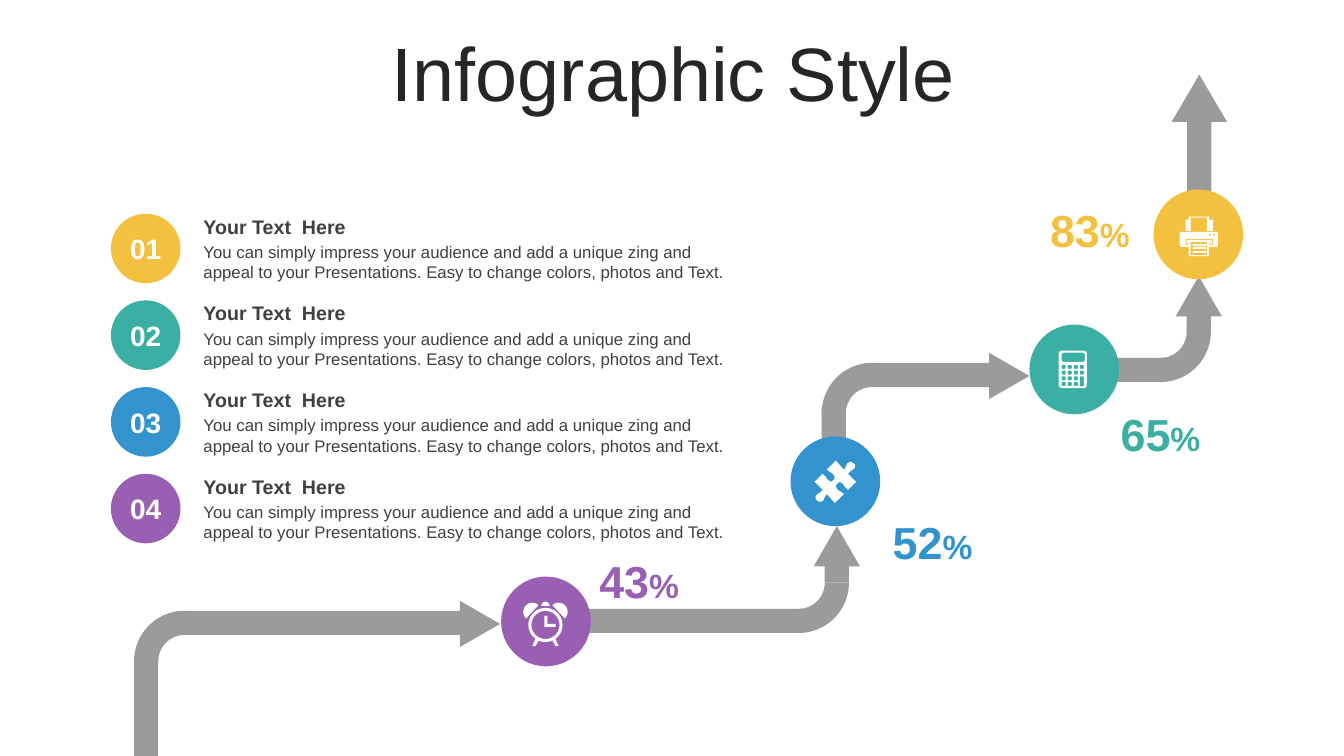
from math import cos, radians, sin

from pptx import Presentation
from pptx.dml.color import RGBColor
from pptx.enum.shapes import MSO_SHAPE as Kind
from pptx.enum.text import MSO_ANCHOR as Anchor, PP_ALIGN as Align
from pptx.util import Inches, Pt

GRAY, DARK, TEXT, WHITE = "9B9B9B", "262626", "404040", "FFFFFF"
GOLD, TEAL, BLUE, PLUM = "F3C040", "3CAFA4", "3293CF", "995FB2"
HEAD = "Your Text  Here"
BODY = ("You can simply impress your audience and add a unique zing and "
        "appeal to your Presentations. Easy to change colors, photos and Text.")


def paint(fill, tone):
    """Give a fill one solid colour."""
    fill.solid()
    fill.fore_color.rgb = RGBColor.from_string(tone)


def style(run, size, tone, bold=False):
    """Set the font of one run."""
    run.font.name, run.font.size, run.font.bold = "Arial", Pt(size), bold
    run.font.color.rgb = RGBColor.from_string(tone)


def plain(shape, tone):
    """Leave a shape with only a fill."""
    shape.shadow.inherit = False
    paint(shape.fill, tone)
    shape.line.fill.background()
    return shape


def draw(slide, kind, x, y, w, h, tone=GRAY, turn=0):
    """Add a preset shape."""
    shape = slide.shapes.add_shape(kind, Inches(x), Inches(y), Inches(w), Inches(h))
    shape.rotation = turn
    return plain(shape, tone)


def write(slide, x, y, w, h, text, size, tone, bold=False):
    """Add a text box and return its paragraph."""
    box = slide.shapes.add_textbox(Inches(x), Inches(y), Inches(w), Inches(h))
    box.text_frame.word_wrap = True
    para = box.text_frame.paragraphs[0]
    para.text = text
    style(para.runs[0], size, tone, bold)
    return para


def bend(slide, x, y, turn):
    """Add a quarter of a round bend."""
    arc = draw(slide, Kind.BLOCK_ARC, x, y, 1, 1, turn=turn)
    for i, value in enumerate((108, 162.85, 0.24)):
        arc.adjustments[i] = value


def go_right(slide, x, y, w, h):
    """Draw a leg that climbs, then points right."""
    draw(slide, Kind.RECTANGLE, x, y + 0.45, 0.24, h - 0.45)
    bend(slide, x, y, 0)
    draw(slide, Kind.RECTANGLE, x + 0.48, y, w - 0.78, 0.24)
    draw(slide, Kind.ISOSCELES_TRIANGLE, x + w - 0.43, y - 0.07, 0.46, 0.4, turn=90)


def go_up(slide, x, y, w, h):
    """Draw a leg that runs right, then points up."""
    right, base = x + w, y + h
    draw(slide, Kind.RECTANGLE, x, base - 0.24, w - 0.46, 0.24)
    bend(slide, right - 1, base - 1, 180)
    draw(slide, Kind.RECTANGLE, right - 0.24, y + 0.28, 0.24, 0.28)
    draw(slide, Kind.ISOSCELES_TRIANGLE, right - 0.35, y, 0.46, 0.4)


def go_out(slide, x, y, w, h):
    """Draw the last arrow, straight up."""
    draw(slide, Kind.RECTANGLE, x + w / 2 - 0.12, y + 0.45, 0.24, h - 0.45)
    draw(slide, Kind.ISOSCELES_TRIANGLE, x, y, w, 0.47)


def rect(x, y, w, h):
    """List the corners of a rectangle."""
    return [(x, y), (x + w, y), (x + w, y + h), (x, y + h)]


def arc(x, y, r, start=0, end=360, steps=24):
    """List points along an arc."""
    turns = [radians(start + (end - start) * i / steps) for i in range(steps + 1)]
    return [(x + r * cos(t), y + r * sin(t)) for t in turns]


def soft(x, y, w, h, r):
    """List points of a rounded rectangle."""
    mids = [(x + w - r, y + h - r), (x + r, y + h - r), (x + r, y + r), (x + w - r, y + r)]
    return [p for i, (a, b) in enumerate(mids)
            for p in arc(a, b, r, 90 * i, 90 * i + 90, 4)]


def flip(loop):
    """Mirror a loop from left to right."""
    return [(-x, y) for x, y in loop]


def clock():
    """List the loops of an alarm clock."""
    ear = arc(-0.13, -0.1, 0.09, -47, -227)
    foot = [(0.1, 0.17), (0.13, 0.24), (0.1, 0.24), (0.07, 0.19)]
    hands = [(-0.01, -0.06), (0.02, -0.06), (0.02, 0.02),
             (0.1, 0.02), (0.1, 0.05), (-0.01, 0.05)]
    return [arc(0, 0.03, 0.17), arc(0, 0.03, 0.14), hands, ear, flip(ear),
            foot, flip(foot), arc(0, -0.16, 0.04, 180, 360)]


def puzzle():
    """List the loop of a puzzle piece, whose halves match."""
    half = [(0.29, 0.09), (0.31, 0.06), (0.32, 0.03), (0.35, 0.01), (0.38, 0.02),
            (0.4, 0.04), (0.4, 0.07), (0.38, 0.09), (0.36, 0.1), (0.33, 0.13),
            (0.41, 0.21), (0.33, 0.29), (0.3, 0.26), (0.28, 0.23), (0.25, 0.21),
            (0.22, 0.23), (0.21, 0.26), (0.23, 0.29), (0.26, 0.31), (0.29, 0.33),
            (0.2, 0.42)]
    return [half + [(0.41 - x, 0.42 - y) for x, y in half]]


def sums():
    """List the loops of a calculator."""
    keys = [soft(0.03 + 0.06 * col, 0.14 + 0.17 * row / 3, 0.04,
                 0.1 if (col, row) == (3, 2) else 0.04, 0.01)
            for row in range(4) for col in range(4) if (col, row) != (3, 3)]
    return [soft(0, 0, 0.28, 0.37, 0.03), soft(0.03, 0.02, 0.23, 0.09, 0.02)] + keys


def printer():
    """List the loops of a printer."""
    slot = [(0.06, 0.22), (0.06, 0.28), (0.09, 0.28), (0.09, 0.27), (0.07, 0.27),
            (0.07, 0.23), (0.32, 0.23), (0.32, 0.27), (0.29, 0.27), (0.29, 0.28),
            (0.33, 0.28), (0.33, 0.22)]
    feed = [(0.09, 0), (0.29, 0), (0.29, 0.03), (0.33, 0.03), (0.33, 0.14),
            (0.27, 0.14), (0.27, 0.01), (0.11, 0.01), (0.11, 0.14), (0.06, 0.14),
            (0.06, 0.03), (0.09, 0.03)]
    lines = [rect(0.13, y, 0.13, 0.02) for y in (0.27, 0.3, 0.34)]
    dots = [arc(x, 0.18, 0.01) for x in (0.3, 0.34)]
    return [soft(0, 0.15, 0.38, 0.15, 0.02), rect(0.09, 0.3, 0.2, 0.09), slot, feed,
            rect(0.11, 0.25, 0.16, 0.13)] + lines + dots


def icon(slide, x, y, loops):
    """Draw loops as one white outline with holes."""
    paths = [[(Inches(x + a), Inches(y + b)) for a, b in loop] for loop in loops]
    pen = slide.shapes.build_freeform(*paths[0][0], scale=1.0)
    for i, path in enumerate(paths):
        if i:
            pen.move_to(*path[0])
        pen.add_line_segments(path[1:], close=True)
    plain(pen.convert_to_shape(), WHITE)


def stop(slide, x, y, tone, make, shift, rate, spot):
    """Draw a stop on the road with its icon and rate."""
    draw(slide, Kind.OVAL, x, y, 0.89, 0.89, tone)
    icon(slide, x + shift[0], y + shift[1], make())
    para = write(slide, *spot, 1.04, 0.64, rate, 32, tone, True)
    para.alignment = Align.CENTER
    sign = para.add_run()
    sign.text = "%"
    style(sign, 24, tone, True)


def item(slide, x, y, label, tone):
    """Draw one numbered entry of the list."""
    disc = draw(slide, Kind.OVAL, x, y, 0.69, 0.69, tone)
    frame = disc.text_frame
    frame.margin_left = frame.margin_right = 0
    frame.vertical_anchor = Anchor.MIDDLE
    frame.text = label
    frame.paragraphs[0].alignment = Align.CENTER
    style(frame.paragraphs[0].runs[0], 20, WHITE, True)
    write(slide, x + 0.82, y - 0.04, 5.5, 0.34, HEAD, 14, TEXT, True)
    write(slide, x + 0.82, y + 0.23, 5.5, 0.5, BODY, 12, TEXT)


def title(slide, x, y, w, h, text):
    """Place and format the title."""
    box = slide.shapes.title
    box.left, box.top, box.width, box.height = map(Inches, (x, y, w, h))
    box.text_frame.text = text
    box.text_frame.vertical_anchor = Anchor.MIDDLE
    para = box.text_frame.paragraphs[0]
    para.alignment, para.line_spacing = Align.CENTER, 0.9
    style(para.runs[0], 54, DARK)


def main():
    """Build the slide and save it."""
    deck = Presentation()
    deck.slide_width, deck.slide_height = Inches(13.33), Inches(7.5)
    slide = deck.slides.add_slide(deck.slide_layouts[5])
    paint(slide.background.fill, WHITE)
    title(slide, 0.35, 0.37, 12.66, 0.79, "Infographic Style")
    go_right(slide, 1.33, 6.06, 3.63, 1.44)
    go_up(slide, 5.83, 5.22, 2.59, 1.06)
    go_right(slide, 8.15, 3.6, 2.06, 0.77)
    go_up(slide, 11.01, 2.74, 1, 1.05)
    go_out(slide, 11.62, 0.74, 0.55, 1.34)
    stop(slide, 4.97, 5.72, PLUM, clock, (0.44, 0.45), "43", (5.82, 5.44))
    stop(slide, 7.84, 4.33, BLUE, puzzle, (0.24, 0.24), "52", (8.73, 5.06))
    stop(slide, 10.21, 3.22, TEAL, sums, (0.29, 0.26), "65", (10.99, 3.99))
    stop(slide, 11.44, 1.88, GOLD, printer, (0.26, 0.27), "83", (10.29, 1.96))
    for i, tone in enumerate((GOLD, TEAL, BLUE, PLUM)):
        item(slide, 1.1, 2.12 + 0.86 * i, f"{i + 1:02}", tone)
    deck.save("out.pptx")


if __name__ == "__main__":
    main()
